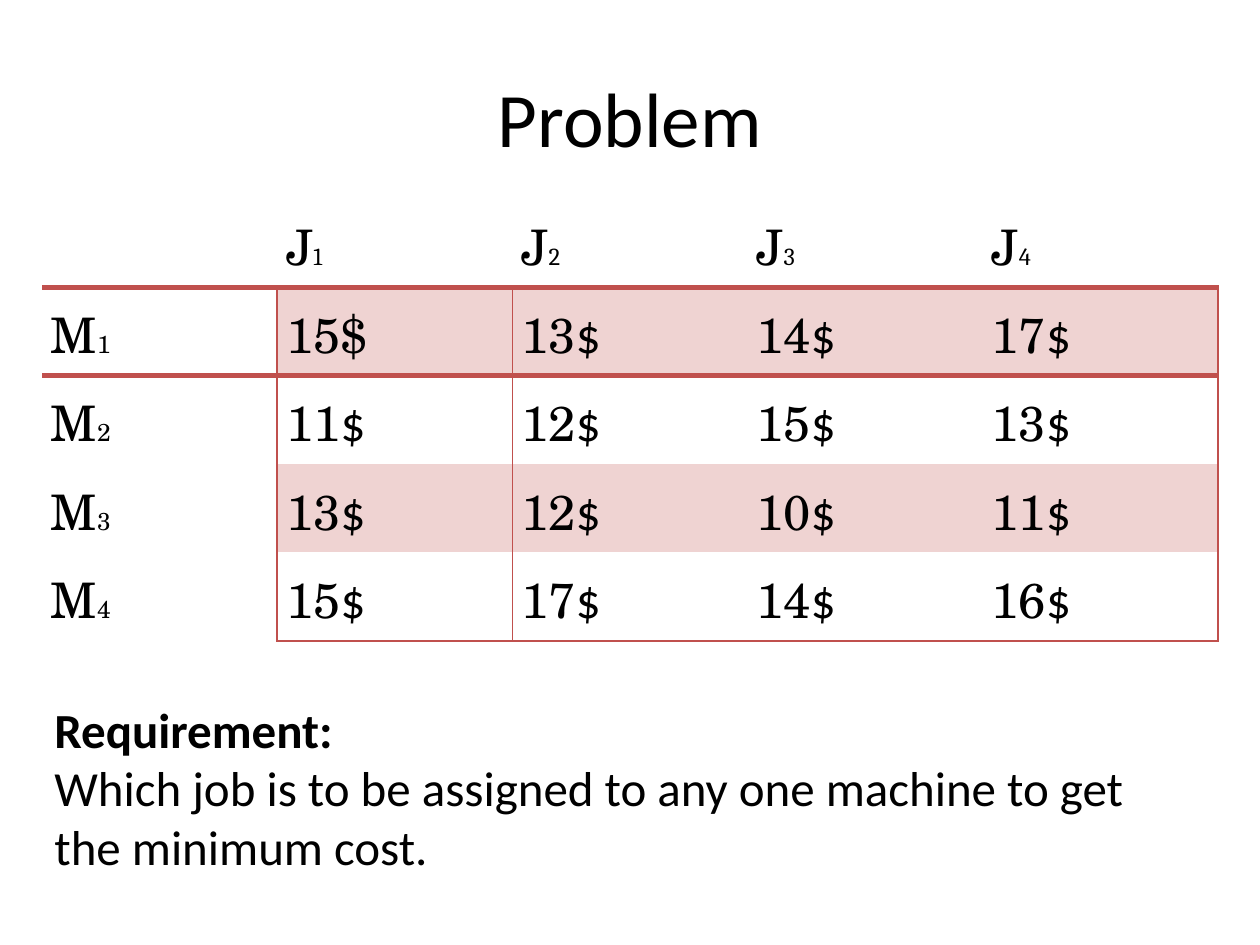
from lxml.etree import SubElement
from pptx import Presentation
from pptx.dml.color import RGBColor
from pptx.enum.text import MSO_ANCHOR, PP_ALIGN
from pptx.oxml.ns import qn
from pptx.util import Pt

PX = 914400 // 126
COLORS = {"text": "000000", "rule": "C0504D", "band": "EFD3D2", "plain": "FFFFFF"}
SERIF, SMALL_SERIF, SANS = "TeX Gyre Schola", "Cambria", "Calibri"
NO_GRID_STYLE = "{2D5ABB26-0587-4C30-8999-92F81FD0307C}"
COSTS = [
    [15, 13, 14, 17],
    [11, 12, 15, 13],
    [13, 12, 10, 11],
    [15, 17, 14, 16],
]


def emu(*lengths):
    return [length * PX for length in lengths]


def rgb(name):
    return RGBColor.from_string(COLORS[name])


def style_font(font, size, face, bold=False):
    font.size, font.name, font.bold = Pt(size), face, bold
    font.color.rgb = rgb("text")


def add_title(slide, box):
    title = slide.shapes.title
    title.left, title.top, title.width, title.height = emu(*box)
    title.text_frame.vertical_anchor = MSO_ANCHOR.MIDDLE
    heading = title.text_frame.paragraphs[0]
    heading.text = "Problem"
    heading.alignment = PP_ALIGN.CENTER
    style_font(heading.font, 44, SANS)


def write_cell(cell, parts):
    """Fill a cell with (text, size, face) parts."""
    cell.margin_left = cell.margin_right = 9 * PX
    cell.margin_top = cell.margin_bottom = 0
    paragraph = cell.text_frame.paragraphs[0]
    paragraph.line_spacing = 1.15
    for text, size, face in parts:
        run = paragraph.add_run()
        run.text = text
        style_font(run.font, size, face)


def draw_borders(cell, widths):
    """Draw the sides given as {side: points}, in schema order L, R, T, B."""
    properties = cell._tc.get_or_add_tcPr()
    for side in "LRTB":
        if side in widths:
            line = SubElement(properties, qn(f"a:ln{side}"), w=str(Pt(widths[side])))
            fill = SubElement(line, qn("a:solidFill"))
            SubElement(fill, qn("a:srgbClr"), val=COLORS["rule"])


def cell_parts(row, column):
    if row == 0 and column == 0:
        return []
    if row == 0:
        return [("J", 28, SERIF), (str(column), 14, SMALL_SERIF)]
    if column == 0:
        return [("M", 28, SERIF), (str(row), 14, SMALL_SERIF if row == 0 else SERIF)]
    cost = str(COSTS[row - 1][column - 1])
    if row == column == 1:
        return [(cost + "$", 28, SERIF)]
    return [(cost, 28, SERIF), ("$", 28, SANS)]


def cell_borders(row, column, last):
    borders = {}
    if row == 0:
        borders["B"] = 3
    if row == 1:
        borders["T"] = 3
    if row > 0:
        if column in (0, last):
            borders["R"] = 1
        if column == 1:
            borders["L"] = 1
        if row == last and column > 0:
            borders["B"] = 1
    return borders


def add_cost_table(slide, box):
    size = len(COSTS) + 1
    table = slide.shapes.add_table(size, size, *emu(*box)).table
    table.first_row = table.horz_banding = False
    table._tbl.tblPr.find(qn("a:tableStyleId")).text = NO_GRID_STYLE
    for row in range(size):
        for column in range(size):
            cell = table.cell(row, column)
            write_cell(cell, cell_parts(row, column))
            draw_borders(cell, cell_borders(row, column, size - 1))
            # Odd machine rows are banded, headings are plain
            if row == 0 or column == 0:
                cell.fill.solid()
                cell.fill.fore_color.rgb = rgb("plain")
            elif row % 2:
                cell.fill.solid()
                cell.fill.fore_color.rgb = rgb("band")
            else:
                cell.fill.background()


def add_requirement(slide, box):
    frame = slide.shapes.add_textbox(*emu(*box)).text_frame
    frame.word_wrap = True
    label = frame.paragraphs[0]
    label.text = "Requirement:"
    style_font(label.font, 28, SANS, bold=True)
    question = frame.add_paragraph()
    question.text = "Which job is to be assigned to any one machine to get the minimum cost."
    style_font(question.font, 28, SANS)


def main():
    presentation = Presentation()
    presentation.slide_width, presentation.slide_height = emu(1260, 945)
    slide = presentation.slides.add_slide(presentation.slide_layouts[5])
    add_title(slide, (63, 38, 1134, 158))
    add_cost_table(slide, (42, 199, 1176, 442))
    add_requirement(slide, (42, 693, 1155, 190))
    presentation.save("out.pptx")


if __name__ == "__main__":
    main()
